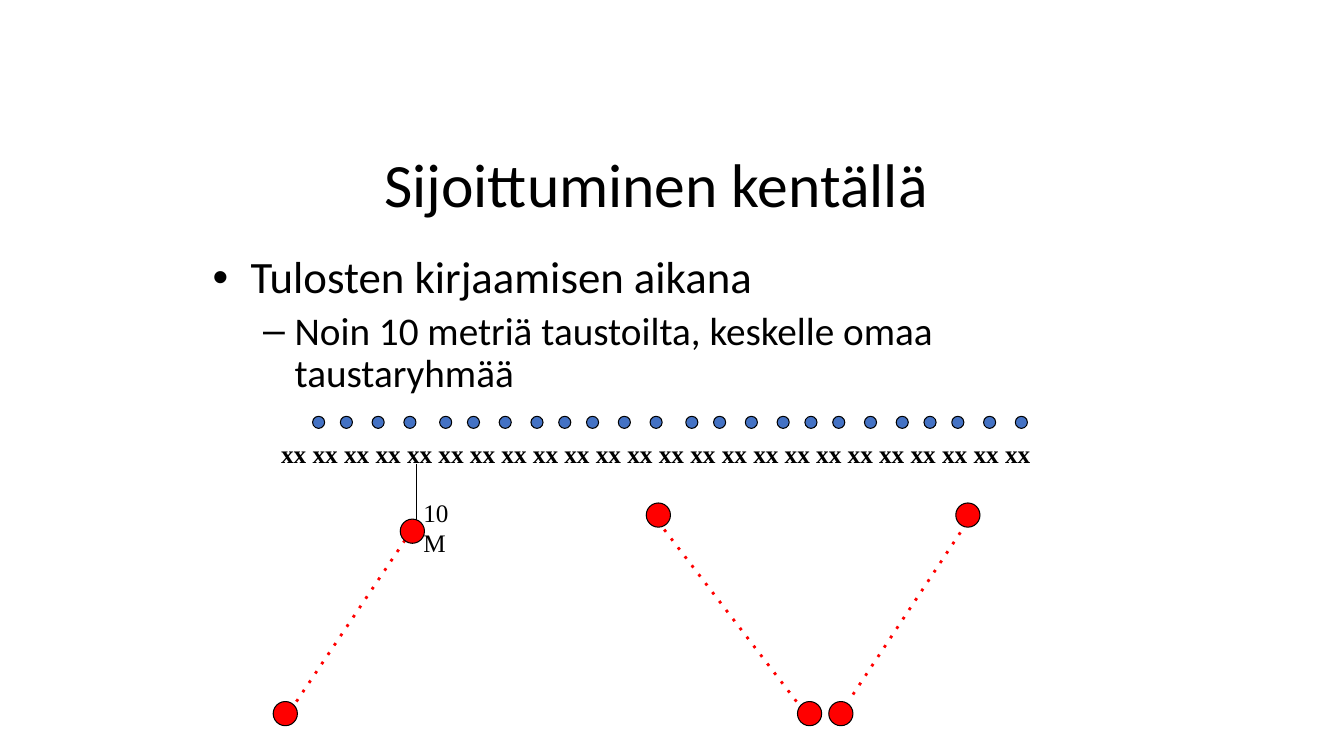
from itertools import accumulate

from lxml import etree
from pptx import Presentation
from pptx.dml.color import RGBColor
from pptx.enum.shapes import MSO_CONNECTOR, MSO_SHAPE
from pptx.enum.text import MSO_ANCHOR, MSO_AUTO_SIZE, PP_ALIGN
from pptx.oxml.ns import qn
from pptx.util import Inches, Pt

OVAL = MSO_SHAPE.OVAL
STRAIGHT = MSO_CONNECTOR.STRAIGHT
MIDDLE = MSO_ANCHOR.MIDDLE
CENTER = PP_ALIGN.CENTER
NO_AUTOFIT = MSO_AUTO_SIZE.NONE

COLORS = {"ink": "000000", "archer": "4472C4", "judge": "FF0000", "page": "FFFFFF"}
HEADING_FONT, FIELD_FONT = "Calibri", "Times New Roman"

TARGET_COUNT = 24
ARCHER_GAPS = [7, 8, 8, 9, 7, 8, 8, 7, 7, 8, 8, 9, 7, 8, 8, 7, 7, 8, 8, 7, 7, 8, 8]
ARCHER_SPAN, ARCHER_SIZE, JUDGE_SIZE = 6.97, 0.12, 0.24
JUDGES = [(0.02, 2.83), (1.28, 1.02), (5.22, 2.83), (5.53, 2.83), (3.72, 0.86), (6.79, 0.86)]
WALKS = [(0.25, 2.83, 1.36, 1.18), (5.21, 2.83, 3.88, 1.1), (5.77, 2.76, 6.87, 1.1)]


def color(name):
    """Return the named palette colour."""
    return RGBColor.from_string(COLORS[name])


def format_paragraph(paragraph, size, font, bold=False):
    """Format the runs of a paragraph."""
    for run in paragraph.runs:
        run.font.size = Pt(size)
        run.font.name = font
        run.font.bold = bold
        run.font.color.rgb = color("ink")


def place(shape, left, top, width, height):
    """Move a placeholder to a box in inches."""
    shape.left, shape.top = Inches(left), Inches(top)
    shape.width, shape.height = Inches(width), Inches(height)


def add_circle(group, left, top, size, fill):
    """Draw a filled circle with a thin outline."""
    circle = group.shapes.add_shape(OVAL, Inches(left), Inches(top), Inches(size), Inches(size))
    circle.shadow.inherit = False
    circle.fill.solid()
    circle.fill.fore_color.rgb = color(fill)
    circle.line.color.rgb = color("ink")
    circle.line.width = Pt(0.75)


def add_line(group, start, end, line_color, width, dotted=False):
    """Draw a straight line, dotted on request."""
    line = group.shapes.add_connector(STRAIGHT, *(Inches(value) for value in (*start, *end)))
    line.line.color.rgb = color(line_color)
    line.line.width = Pt(width)
    properties = line._element.spPr
    if dotted:
        etree.SubElement(properties.find(qn("a:ln")), qn("a:prstDash"), val="dot")
    etree.SubElement(properties, qn("a:effectLst"))


def add_label(group, text, left, top, width, height, bold=False, wrap=True):
    """Write a field label."""
    label = group.shapes.add_textbox(Inches(left), Inches(top), Inches(width), Inches(height))
    label.text_frame.word_wrap = wrap
    label.text_frame.text = text
    format_paragraph(label.text_frame.paragraphs[0], 18, FIELD_FONT, bold)


def fill_title(title, left, top, width, height):
    """Place and write the slide title."""
    place(title, left, top, width, height)
    frame = title.text_frame
    frame.text = "Sijoittuminen kentällä"
    frame.auto_size = NO_AUTOFIT
    frame.vertical_anchor = MIDDLE
    paragraph = frame.paragraphs[0]
    paragraph.alignment = CENTER
    paragraph.line_spacing = 0.9
    format_paragraph(paragraph, 44, HEADING_FONT)


def fill_body(body, left, top, width, height):
    """Place and write the two-level list."""
    place(body, left, top, width, height)
    frame = body.text_frame
    frame.text = "Tulosten kirjaamisen aikana\nNoin 10 metriä taustoilta, keskelle omaa taustaryhmää"
    frame.auto_size = NO_AUTOFIT
    for level, (paragraph, size, space) in enumerate(zip(frame.paragraphs, (32, 28), (0, 5.6))):
        paragraph.level = level
        paragraph.line_spacing = 0.9
        paragraph.space_before = Pt(space)
        format_paragraph(paragraph, size, HEADING_FONT)


def draw_field(slide, left, top, width):
    """Draw the archers, targets and judges from the field's top left corner."""
    group = slide.shapes.add_group_shape()
    targets = " ".join(["xx"] * TARGET_COUNT)
    add_label(group, targets, left, top + 0.17, width, 0.4, bold=True, wrap=False)
    step = ARCHER_SPAN / sum(ARCHER_GAPS)
    for offset in accumulate(ARCHER_GAPS, initial=0):
        add_circle(group, left + 0.41 + offset * step, top, ARCHER_SIZE, "archer")
    for start_x, start_y, end_x, end_y in WALKS:
        start, end = (left + start_x, top + start_y), (left + end_x, top + end_y)
        add_line(group, start, end, "judge", 2, dotted=True)
    add_label(group, "10 M", left + 1.41, top + 0.75, 0.71, 0.4)
    add_line(group, (left + 1.44, top + 0.47), (left + 1.44, top + 1.1), "ink", 0.75)
    for judge_x, judge_y in JUDGES:
        add_circle(group, left + judge_x, top + judge_y, JUDGE_SIZE, "judge")


def main():
    """Build and save the presentation."""
    presentation = Presentation()
    presentation.slide_width, presentation.slide_height = Inches(13.33), Inches(7.5)
    slide = presentation.slides.add_slide(presentation.slide_layouts[1])
    slide.background.fill.solid()
    slide.background.fill.fore_color.rgb = color("page")
    fill_title(slide.shapes.title, 2.01, 1.24, 9, 1.25)
    fill_body(slide.placeholders[1], 2.01, 2.48, 9, 4.95)
    draw_field(slide, 2.69, 4.13, 7.64)
    presentation.save("out.pptx")


if __name__ == "__main__":
    main()
